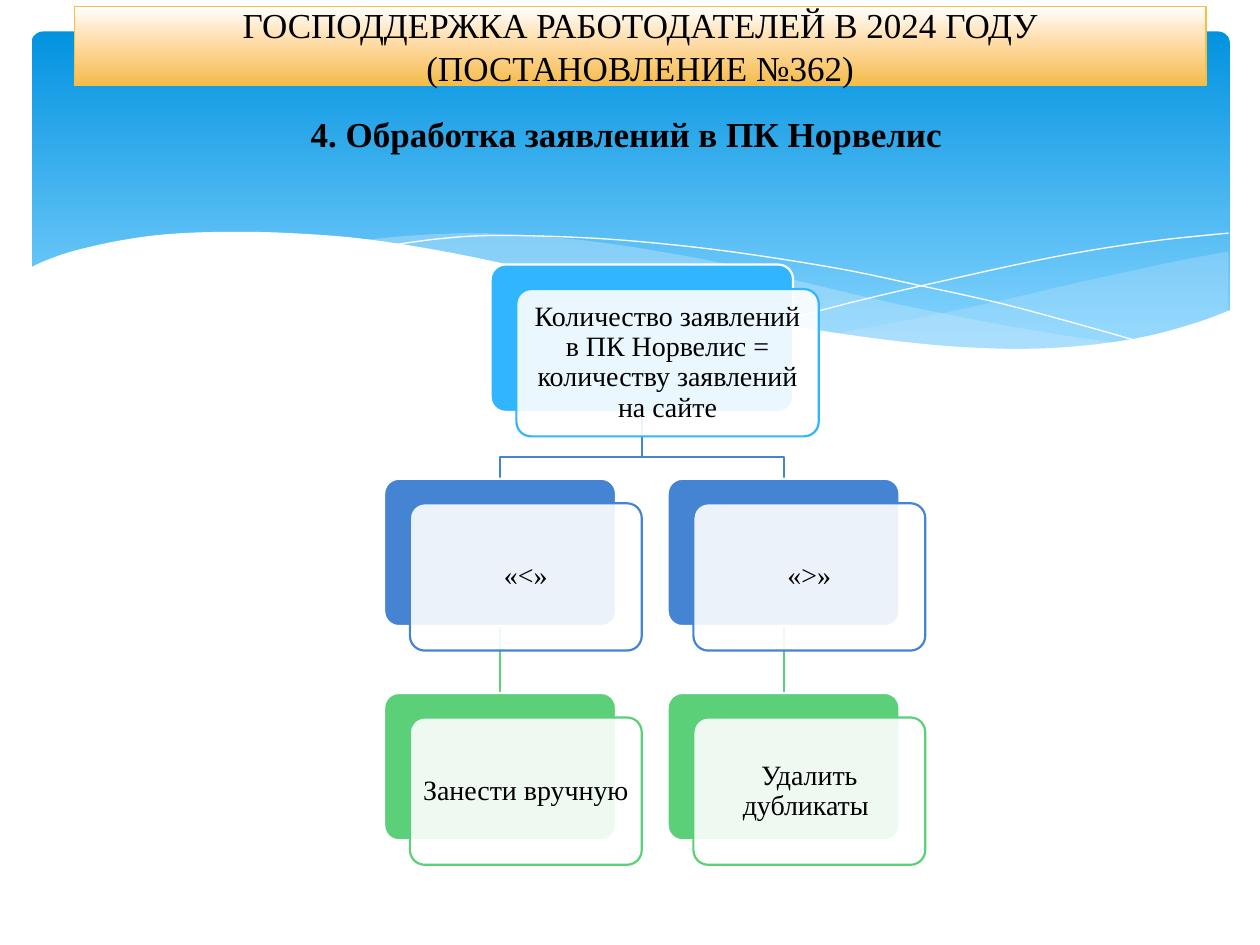
import copy

import lxml.etree
import pptx
import pptx.dml.color
import pptx.enum.shapes
import pptx.enum.text
import pptx.oxml.ns
import pptx.util

Pt = pptx.util.Pt
qn = pptx.oxml.ns.qn
SHAPE = pptx.enum.shapes.MSO_SHAPE

COLORS = {
    "black": "000000", "white": "FFFFFF", "wave": "C6E7FC",
    "sky_top": "0293E0", "sky_bottom": "83D3FE",
    "peach": "FFDDAA", "amber": "F4BB4A", "gold": "F5C040",
    "root": "31B6FD", "branch": "4584D3", "action": "5BD078",
}
HEADING = {"size": Pt(20), "name": "Times New Roman"}
SUBHEADING = {**HEADING, "bold": True}
CARD_FONT = {**HEADING, "size": Pt(16)}

CENTER_X, BRANCH_DX = 366.8, 81
ROW_TOP, ROW_STEP = 151.2, 122.4
CARD_H, ROOT_W, CHILD_W = 84.2, 172.8, 132.5
PANEL_DX, PANEL_DY = 14.7, 14
ELBOW_Y = 261.4

RIGHT_WAVE = [
    [(702, 144), (692.6, 145.4), (663.1, 151.2), (619.9, 160.6), (560.9, 174.2),
     (508.3, 185), (475.9, 190.8)],
    [(475.9, 190.8), (507.6, 195.1), (545, 198.7), (578.2, 200.2), (614.9, 198.7),
     (651.6, 193.7), (678.2, 186.5), (702, 177.8)],
]
LONG_WAVE = [
    [(643, 196.6), (602.6, 190.8), (558, 182.9), (508.3, 172.8), (452.9, 159.8),
     (409.7, 149.8), (370.1, 142.6), (334.8, 137.5), (302.4, 134.6),
     (273.6, 133.2), (247.7, 133.9), (225.4, 135.4), (205.9, 137.5)],
    [(205.9, 137.5), (246.2, 143.3), (290.9, 151.9), (323.3, 159.8), (381.6, 172.8),
     (432.7, 183.6), (478.8, 191.5), (519.8, 197.3), (556.6, 199.4),
     (589, 200.2), (617, 199.4), (643, 196.6)],
]
FALLING_LINE = [(222.5, 140.4), (247.7, 136.8), (278.6, 134.6), (324, 135.4),
                (367.2, 138.2), (419, 144), (478.8, 153.4), (523.4, 162.7),
                (572.4, 173.5), (625.7, 187.9), (653, 195.8)]
RISING_LINE = [(441.4, 185), (483.8, 173.5), (538.6, 160.6), (601.9, 146.9),
               (655.2, 138.2), (702, 133.2)]
WHITE_WAVE = [
    [(703.4, 177.1), (684, 184.3), (655.2, 192.2), (621.4, 197.3), (582.5, 199.4),
     (535.7, 197.3), (481, 190.8), (416.9, 180), (362.2, 167.8), (321.8, 158.4),
     (262.8, 145.4), (210.2, 136.8), (165.6, 133.2), (127.4, 132.5), (95, 133.9),
     (68.4, 137.5), (42.5, 143.3), (25.9, 149), (16.6, 153.4)],
    [(16.6, 236.9), (703.4, 236.9)],
]


def rgb(name):
    return pptx.dml.color.RGBColor.from_string(COLORS[name])


def set_fill(s, color, opacity=100):
    s.fill.solid()
    s.fill.fore_color.rgb = rgb(color)
    if opacity < 100:
        node = s._element.spPr.find(qn("a:solidFill"))[0]
        lxml.etree.SubElement(node, qn("a:alpha"), val=str(opacity * 1000))


def set_gradient(s, stops):
    s.fill.gradient()
    s.fill.gradient_angle = 270
    gs_list = s._element.spPr.find(".//" + qn("a:gsLst"))
    while len(gs_list) < len(stops):
        gs_list.append(copy.deepcopy(gs_list[-1]))
    for stop, (position, color) in zip(s.fill.gradient_stops, stops):
        stop.position = position
        stop.color.rgb = rgb(color)


def set_line(s, color, width):
    if color:
        s.line.color.rgb = rgb(color)
        s.line.width = Pt(width)
    else:
        s.line.fill.background()


def set_text(s, text, font, inset=None, spacing=None):
    tf = s.text_frame
    tf.word_wrap = True
    tf.vertical_anchor = pptx.enum.text.MSO_ANCHOR.MIDDLE
    if inset is not None:
        for side in ("left", "right", "top", "bottom"):
            setattr(tf, "margin_" + side, Pt(inset))
    p = tf.paragraphs[0]
    p.alignment = pptx.enum.text.PP_ALIGN.CENTER
    p.line_spacing = spacing
    r = p.add_run()
    r.text = text
    for key, value in font.items():
        setattr(r.font, key, value)
    r.font.color.rgb = rgb("black")


def add_box(shapes, kind, box, line=None, width=1.25, corner=None):
    s = shapes.add_shape(kind, *map(Pt, box))
    s.shadow.inherit = False
    if corner:
        s.adjustments[0] = corner
    set_line(s, line, width)
    return s


def smooth(points, steps=5):
    ends = [points[0], *points, points[-1]]
    curve = [points[0]]
    for a, b, c, d in zip(ends, ends[1:], ends[2:], ends[3:]):
        for i in range(1, steps + 1):
            t = i / steps
            curve.append(tuple(
                (2 * q + (r - p) * t + (2 * p - 5 * q + 4 * r - s) * t ** 2
                 + (3 * q - p - 3 * r + s) * t ** 3) / 2
                for p, q, r, s in zip(a, b, c, d)))
    return curve


def add_outline(shapes, points, fill=None, opacity=100, line=None, width=0):
    points = [(Pt(x), Pt(y)) for x, y in points]
    builder = shapes.build_freeform(*points[0], scale=1.0)
    builder.add_line_segments(points[1:], close=fill is not None)
    s = builder.convert_to_shape()
    s.shadow.inherit = False
    if fill:
        set_fill(s, fill, opacity)
    else:
        s.fill.background()
    set_line(s, line, width)


def add_wave(shapes, edges, fill, opacity=100):
    points = [point for edge in edges for point in smooth(edge)]
    add_outline(shapes, points, fill, opacity)


def add_backdrop(shapes):
    s = add_box(shapes, SHAPE.ROUNDED_RECTANGLE, (18, 18, 684.7, 194.4), corner=0.034)
    set_gradient(s, [(0, "sky_top"), (0.9, "sky_bottom")])
    add_wave(shapes, RIGHT_WAVE, "wave", 29)
    add_wave(shapes, LONG_WAVE, "wave", 40)
    for points in (FALLING_LINE, RISING_LINE):
        add_outline(shapes, smooth(points), line="white")
    add_wave(shapes, WHITE_WAVE, "white")


def row_y(row):
    return ROW_TOP + row * ROW_STEP


def add_link(shapes, x):
    ends = (x, row_y(1) + CARD_H, x, row_y(2))
    link = shapes.add_connector(pptx.enum.shapes.MSO_CONNECTOR.STRAIGHT, *map(Pt, ends))
    lxml.etree.SubElement(link._element.spPr, qn("a:effectLst"))
    set_line(link, "action", 1.25)
    return link


def add_card(shapes, x, row, width, color, text):
    left, top = x - width / 2, row_y(row)
    back = add_box(shapes, SHAPE.ROUNDED_RECTANGLE, (left, top, width, CARD_H),
                   "white", corner=0.1)
    set_fill(back, color)
    front = add_box(shapes, SHAPE.ROUNDED_RECTANGLE,
                    (left + PANEL_DX, top + PANEL_DY, width, CARD_H), color, corner=0.1)
    set_fill(front, "white", 90)
    set_text(front, text, CARD_FONT, inset=2.3, spacing=0.9)
    return back


def add_tree(shapes):
    branches = [(CENTER_X - BRANCH_DX, "«<»", "Занести вручную"),
                (CENTER_X + BRANCH_DX, "«>»", "Удалить дубликаты ")]
    links = []
    for x, _, _ in branches:
        links.append(add_link(shapes, x))
        add_outline(shapes, [(CENTER_X, row_y(0) + CARD_H), (CENTER_X, ELBOW_Y),
                             (x, ELBOW_Y), (x, row_y(1))], line="branch", width=1.25)
    add_card(shapes, CENTER_X, 0, ROOT_W, "root",
             "Количество заявлений в ПК Норвелис = количеству заявлений на сайте")
    for link, (x, sign, action) in zip(links, branches):
        link.begin_connect(add_card(shapes, x, 1, CHILD_W, "branch", sign), 2)
        link.end_connect(add_card(shapes, x, 2, CHILD_W, "action", action), 0)


def main():
    prs = pptx.Presentation()
    prs.slide_width, prs.slide_height = Pt(720), Pt(540)
    shapes = prs.slides.add_slide(prs.slide_layouts[6]).shapes
    add_backdrop(shapes)
    title = add_box(shapes, SHAPE.RECTANGLE, (42.5, 3.6, 646.6, 45.4), "gold", 0.75)
    set_gradient(title, [(0, "white"), (0.44, "peach"), (1, "amber")])
    set_text(title, "ГОСПОДДЕРЖКА РАБОТОДАТЕЛЕЙ В 2024 ГОДУ (ПОСТАНОВЛЕНИЕ №362)", HEADING)
    add_tree(shapes)
    subtitle = shapes.add_textbox(*map(Pt, (20.2, 60.5, 680.4, 31.7)))
    set_text(subtitle, "4. Обработка заявлений в ПК Норвелис ", SUBHEADING)
    prs.save("out.pptx")


if __name__ == "__main__":
    main()
